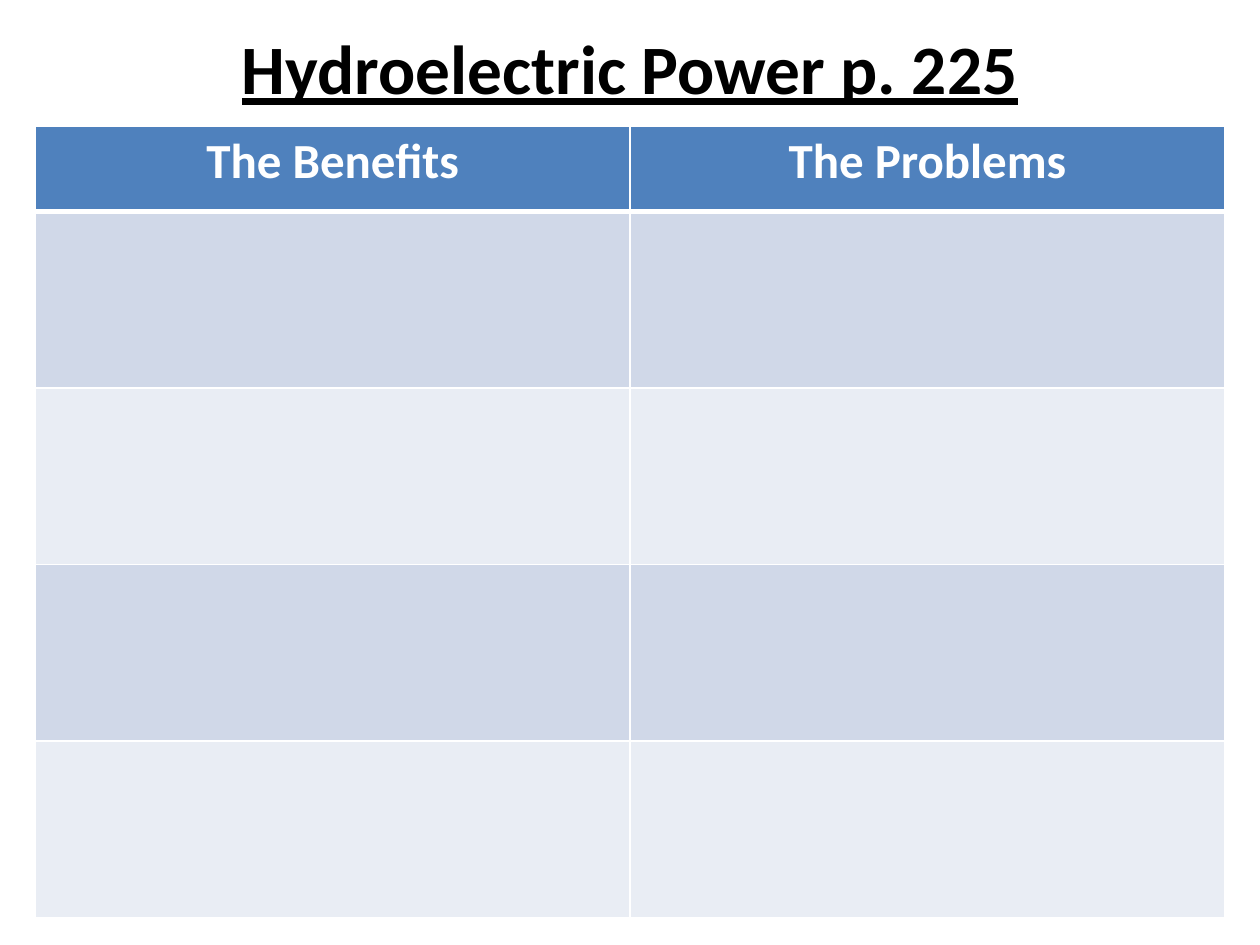
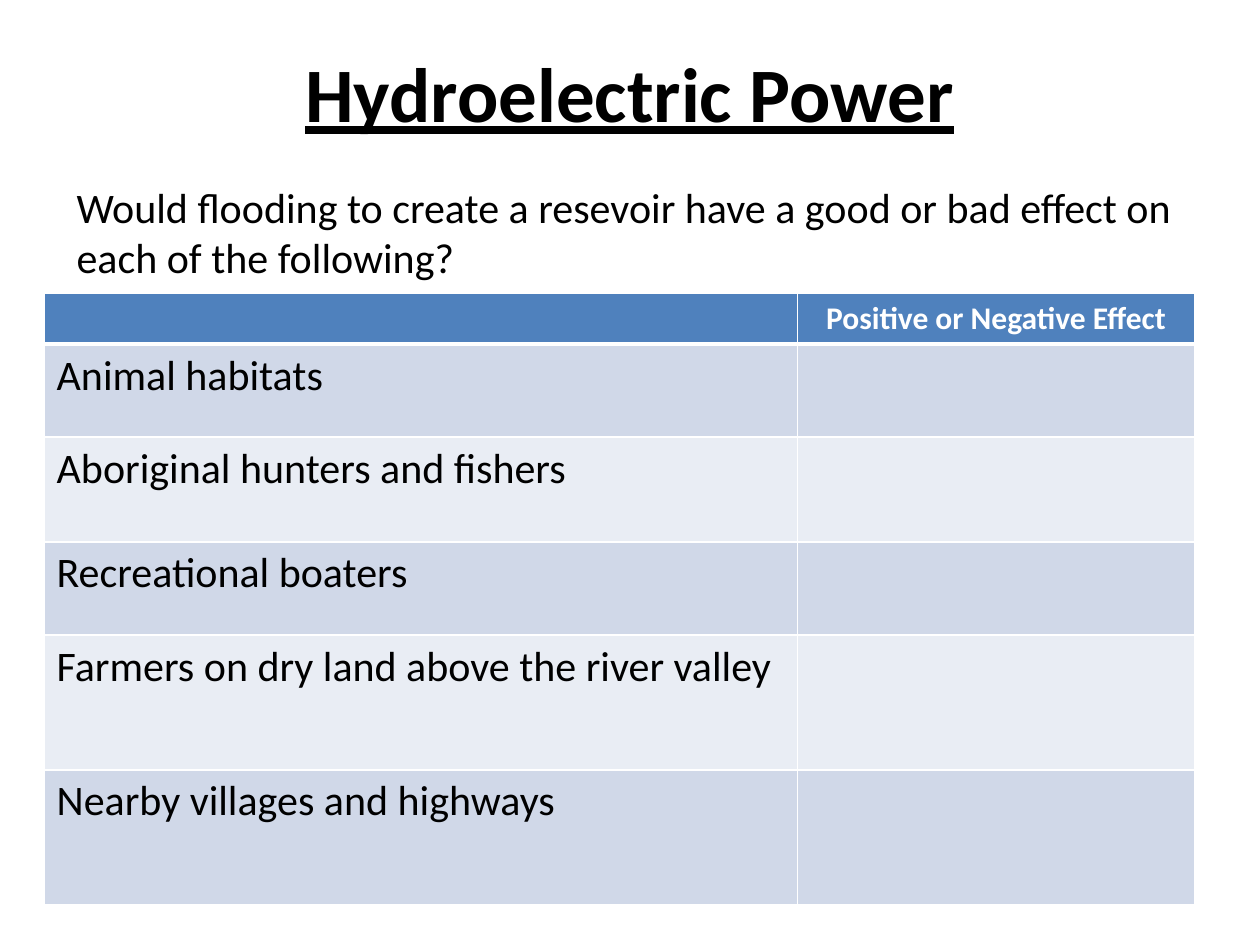
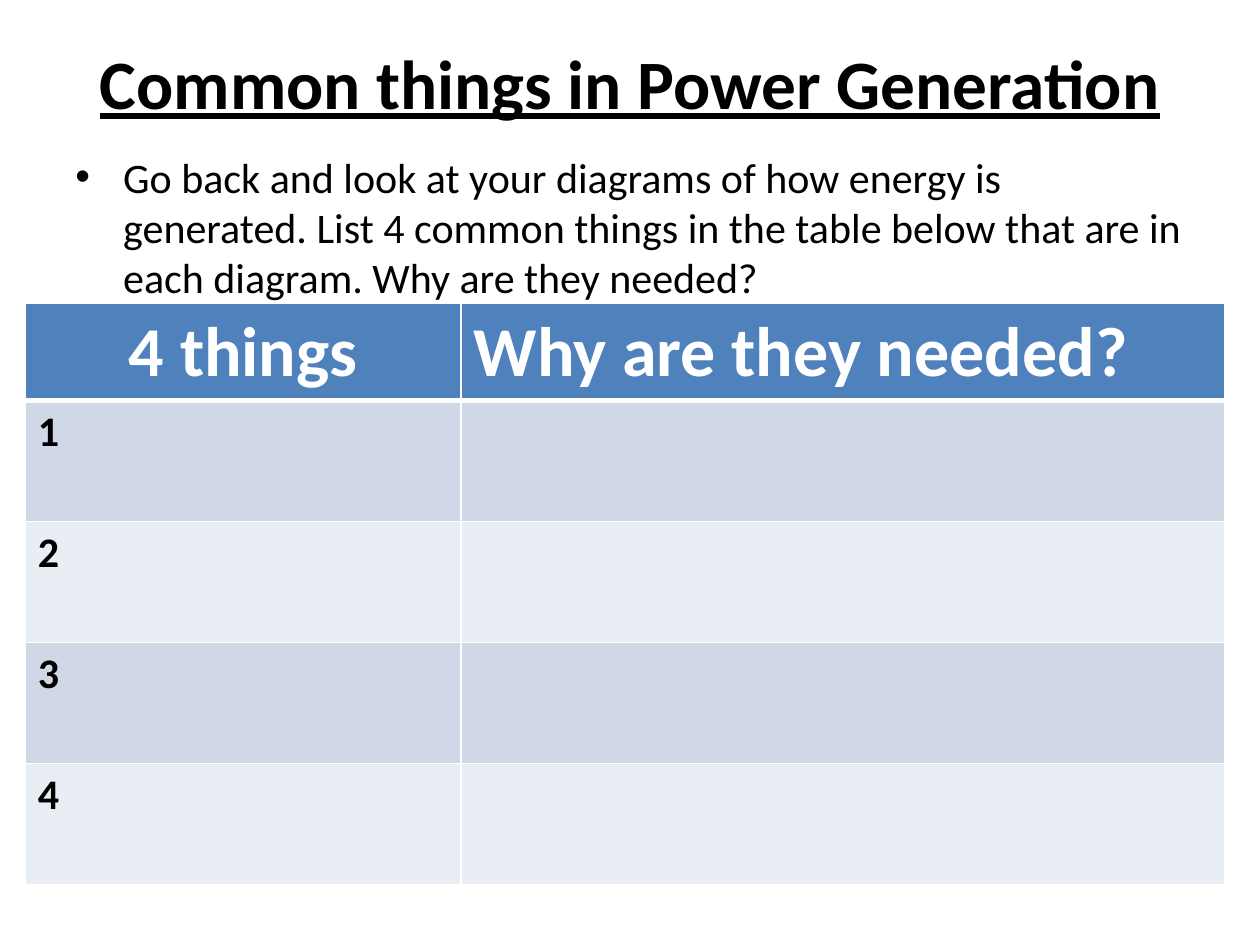
from lxml import etree
from pptx import Presentation
from pptx.dml.color import RGBColor
from pptx.enum.text import MSO_ANCHOR, PP_ALIGN
from pptx.oxml.ns import qn
from pptx.util import Inches, Pt

# Shared style
FONT = "Calibri"
BLACK = RGBColor(0x00, 0x00, 0x00)
WHITE = RGBColor(0xFF, 0xFF, 0xFF)
HEADER_BLUE = RGBColor(0x4F, 0x81, 0xBD)
BANDS = [RGBColor(0xD0, 0xD8, 0xE8), RGBColor(0xE9, 0xED, 0xF4)]
LEFT, CENTER = PP_ALIGN.LEFT, PP_ALIGN.CENTER
MIDDLE = MSO_ANCHOR.MIDDLE
BODY_SIZE = 24
THIN, THICK = 1, 3
MARGIN, TITLE_TOP, TITLE_WIDTH = 0.5, 0.3, 9
BULLET_INDENT = Inches(0.38)

# Slide content, lengths in inches
PAGES = [
    {
        "title": ("Hydroelectric Power p. 225", 39.6, 0.46),
        "table_at": (0.28, 1),
        "columns": [4.72] * 2,
        "rows": [0.68] + [1.4] * 4,
        "header": [("The Benefits", CENTER), ("The Problems", CENTER)],
        "header_size": 28,
        "labels": [],
    },
    {
        "title": ("Hydroelectric Power", 44, 0.85),
        "prompt": "Would flooding to create a resevoir have a good or bad effect "
                  "on each of the following?",
        "prompt_at": (0.51, 1.39, 9.13, 0.91),
        "table_at": (0.35, 2.33),
        "columns": [5.98, 3.15],
        "rows": [0.4, 0.74, 0.83, 0.74, 1.07, 1.07],
        "header": [("", LEFT), ("Positive or Negative Effect", CENTER)],
        "header_size": 18,
        "labels": ["Animal habitats", "Aboriginal hunters and fishers",
                   "Recreational boaters",
                   "Farmers on dry land above the river valley",
                   "Nearby villages and highways"],
    },
    {
        "title": ("Common things in Power Generation", 39.6, 0.69),
        "prompt": "Go back and look at your diagrams of how energy is generated. "
                  "List 4 common things in the table below that are in each diagram. "
                  "Why are they needed?",
        "prompt_at": (MARGIN, 1.15, 9, 1.18),
        "bullet": True,
        "table_at": (0.2, 2.41),
        "columns": [3.46, 6.06],
        "rows": [0.77] + [0.96] * 4,
        "header": [("4 things", CENTER), ("Why are they needed?", LEFT)],
        "header_size": 40,
        "labels": ["1", "2", "3", "4"],
        "bold_labels": True,
    },
]


def write(frame, text, size, color=BLACK, bold=False, align=LEFT):
    """Fill the first paragraph of a text frame and return it."""
    para = frame.paragraphs[0]
    para.text = text
    para.alignment = align
    para.font.name = FONT
    para.font.size = Pt(size)
    para.font.bold = bold
    para.font.color.rgb = color
    return para


def style_cell(cell, fill, top, bottom):
    """Give a cell white borders and a solid fill."""
    properties = cell._tc.get_or_add_tcPr()
    for side, width in (("L", THIN), ("R", THIN), ("T", top), ("B", bottom)):
        line = etree.SubElement(properties, qn(f"a:ln{side}"), w=str(Pt(width)))
        solid = etree.SubElement(line, qn("a:solidFill"))
        etree.SubElement(solid, qn("a:srgbClr"), val=str(WHITE))
    cell.fill.solid()
    cell.fill.fore_color.rgb = fill


deck = Presentation()
deck.slide_width, deck.slide_height = Inches(10), Inches(7.5)
blank_layout = deck.slide_layouts[6]

for page in PAGES:
    slide = deck.slides.add_slide(blank_layout)

    # Title
    title, title_size, title_height = page["title"]
    box = slide.shapes.add_textbox(*map(Inches, (MARGIN, TITLE_TOP, TITLE_WIDTH, title_height)))
    box.text_frame.word_wrap = True
    box.text_frame.vertical_anchor = MIDDLE
    para = write(box.text_frame, title, title_size, bold=True, align=CENTER)
    para.font.underline = True

    # Prompt above the table
    if "prompt" in page:
        box = slide.shapes.add_textbox(*map(Inches, page["prompt_at"]))
        box.text_frame.word_wrap = True
        para = write(box.text_frame, page["prompt"], BODY_SIZE)
        if page.get("bullet"):
            properties = para._p.get_or_add_pPr()
            properties.set("marL", str(BULLET_INDENT))
            properties.set("indent", str(-BULLET_INDENT))
            bullet_font = etree.Element(qn("a:buFont"), typeface="Arial")
            bullet = etree.Element(qn("a:buChar"), char="•")
            properties.insert(0, bullet_font)
            bullet_font.addnext(bullet)

    # Table
    columns, rows = page["columns"], page["rows"]
    table = slide.shapes.add_table(
        len(rows), len(columns),
        *map(Inches, (*page["table_at"], sum(columns), sum(rows)))).table
    for column, width in zip(table.columns, columns):
        column.width = Inches(width)
    for row, height in zip(table.rows, rows):
        row.height = Inches(height)

    for index, row in enumerate(table.rows):
        fill = BANDS[(index - 1) % 2] if index else HEADER_BLUE
        for cell in row.cells:
            style_cell(cell, fill, top=THICK if index == 1 else THIN,
                       bottom=THIN if index else THICK)

    for column, (text, align) in enumerate(page["header"]):
        if text:
            write(table.cell(0, column).text_frame, text, page["header_size"],
                  WHITE, True, align)
    for row, label in enumerate(page["labels"], start=1):
        write(table.cell(row, 0).text_frame, label, BODY_SIZE,
              bold=page.get("bold_labels", False))

deck.save("out.pptx")
